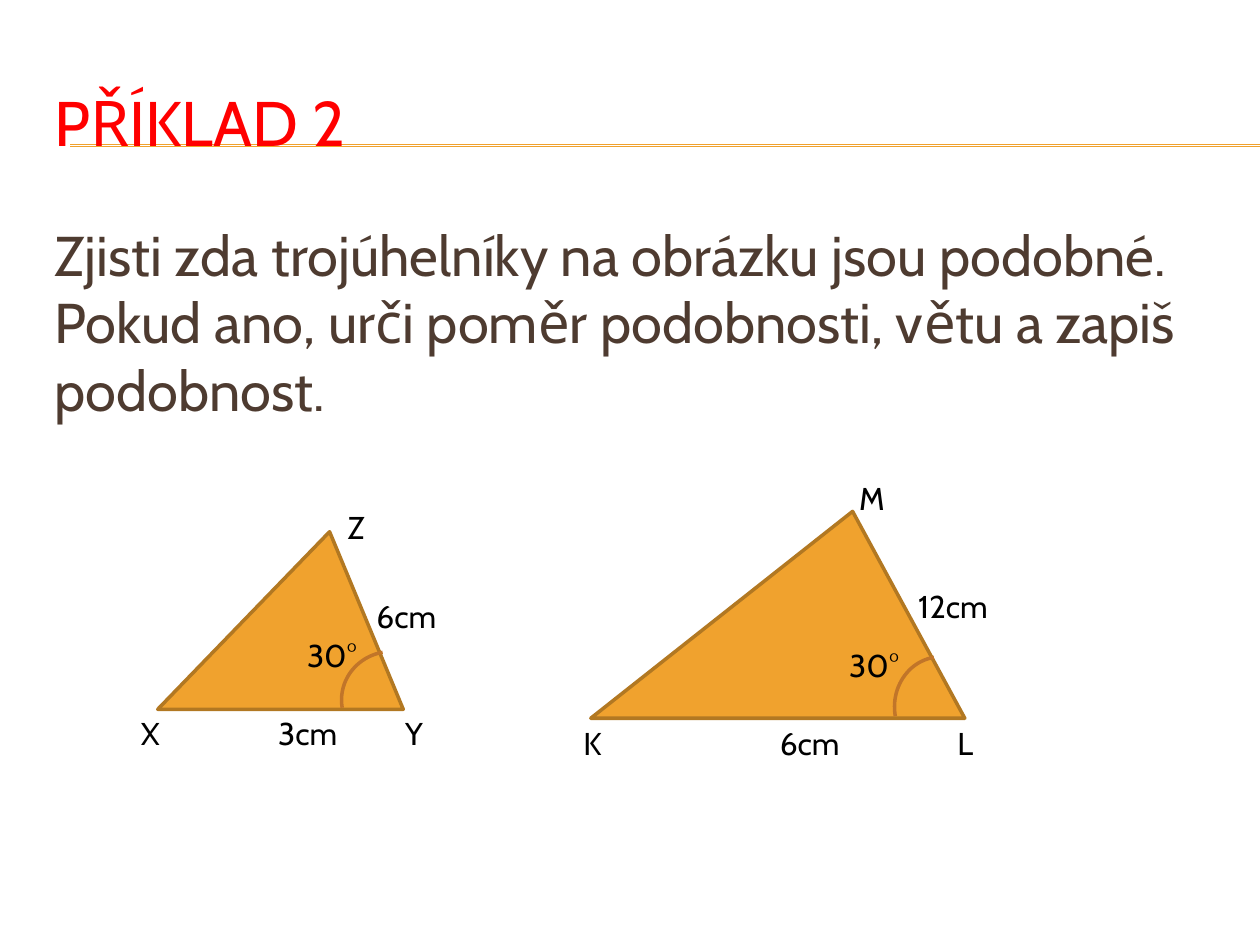
from lxml.etree import SubElement
from pptx import Presentation
from pptx.dml.color import RGBColor
from pptx.enum.shapes import MSO_CONNECTOR as CONNECTOR, MSO_SHAPE as SHAPE
from pptx.enum.text import MSO_ANCHOR as ANCHOR, MSO_AUTO_SIZE as AUTO_SIZE, PP_ALIGN as ALIGN
from pptx.oxml.ns import qn
from pptx.util import Cm, Pt

FONT = "Cabin"
ORANGE, OUTLINE, ARC = "F0A22E", "B27822", "C17529"
RED, BROWN, BLACK = "FF0000", "4E3B30", "000000"

HEADING = "PŘÍKLAD 2"
TASK = ("Zjisti zda trojúhelníky na obrázku jsou podobné. Pokud ano, "
        "urči poměr podobnosti, větu a zapiš podobnost.")
HEADING_BOX = (0.84, 1.27, 24.13, 2.34)
TASK_BOX = (0.84, 4.32, 24.13, 12.57)
RULE_LEFT, RULE_RIGHT, RULE_HEIGHTS = 1.42, 25.4, (2.92, 2.95)
LABEL_HEIGHT = 1.02
APEX, ARC_TURN = 0.7, 260.4

TRIANGLES = [
    {"box": (3.18, 10.72, 4.95, 3.58), "angle": (6.91, 13.11, 1.93, 1.98),
     "labels": [("X", 2.59, 14.27, 0.99), ("Y", 7.92, 14.27, 0.99),
                ("Z", 6.76, 10.11, 0.99), ("3cm", 5.36, 14.27, 1.78),
                ("6cm", 7.34, 11.91, 1.78), ("30°", 5.94, 12.7, 1.98)]},
    {"box": (11.91, 10.31, 7.54, 4.17), "angle": (17.96, 13.31, 2.08, 1.93),
     "labels": [("K", 11.51, 14.48, 1.4), ("L", 19.05, 14.48, 1.4),
                ("M", 17.07, 9.53, 1.4), ("6cm", 15.47, 14.48, 1.98),
                ("12cm", 18.26, 11.71, 2.59), ("30°", 16.87, 12.9, 2.18)]},
]


def color(hex_code):
    return RGBColor.from_string(hex_code)


def lengths(box):
    return [Cm(value) for value in box]


def write(frame, text, size, hex_code):
    frame.text = text
    frame.word_wrap = True
    paragraph = frame.paragraphs[0]
    paragraph.alignment = ALIGN.LEFT
    font = paragraph.runs[0].font
    font.name, font.size, font.color.rgb = FONT, Pt(size), color(hex_code)
    return paragraph


def fill_placeholder(holder, box, text, size, hex_code, anchor):
    holder.left, holder.top, holder.width, holder.height = lengths(box)
    frame = holder.text_frame
    paragraph = write(frame, text, size, hex_code)
    frame.auto_size = AUTO_SIZE.NONE
    frame.vertical_anchor = anchor
    return paragraph


def add_outlined(slide, kind, box, line_hex):
    shape = slide.shapes.add_shape(kind, *lengths(box))
    shape.shadow.inherit = False
    shape.line.color.rgb = color(line_hex)
    shape.line.width = Pt(2)
    return shape


def add_rule(slide, height, depth):
    rule = slide.shapes.add_connector(
        CONNECTOR.STRAIGHT, *lengths((RULE_LEFT, height, RULE_RIGHT, height)))
    rule.line.color.rgb = color(ORANGE)
    rule.line.width = Pt(0.75)
    SubElement(rule._element.spPr, qn("a:effectLst"))
    slide.shapes._spTree.insert(depth, rule._element)


def add_triangle(slide, box, angle, labels):
    triangle = add_outlined(slide, SHAPE.ISOSCELES_TRIANGLE, box, OUTLINE)
    triangle.adjustments[0] = APEX
    triangle.fill.solid()
    triangle.fill.fore_color.rgb = color(ORANGE)

    arc = add_outlined(slide, SHAPE.ARC, angle, ARC)
    arc.fill.background()
    arc.rotation = ARC_TURN

    for text, left, top, width in labels:
        label = slide.shapes.add_textbox(*lengths((left, top, width, LABEL_HEIGHT)))
        write(label.text_frame, text, 18, BLACK)
        label.text_frame.auto_size = AUTO_SIZE.SHAPE_TO_FIT_TEXT


def main():
    deck = Presentation()
    deck.slide_width, deck.slide_height = Cm(25.4), Cm(19.05)
    slide = deck.slides.add_slide(deck.slide_layouts[1])
    heading, task = slide.placeholders

    fill_placeholder(heading, HEADING_BOX, HEADING, 36, RED, ANCHOR.MIDDLE)
    paragraph = fill_placeholder(task, TASK_BOX, TASK, 32, BROWN, ANCHOR.TOP)
    properties = paragraph._p.get_or_add_pPr()
    properties.set("marL", "0")
    properties.set("indent", "0")
    SubElement(properties, qn("a:buNone"))

    for depth, height in enumerate(RULE_HEIGHTS, start=2):
        add_rule(slide, height, depth)
    for triangle in TRIANGLES:
        add_triangle(slide, **triangle)

    deck.save("out.pptx")


if __name__ == "__main__":
    main()
